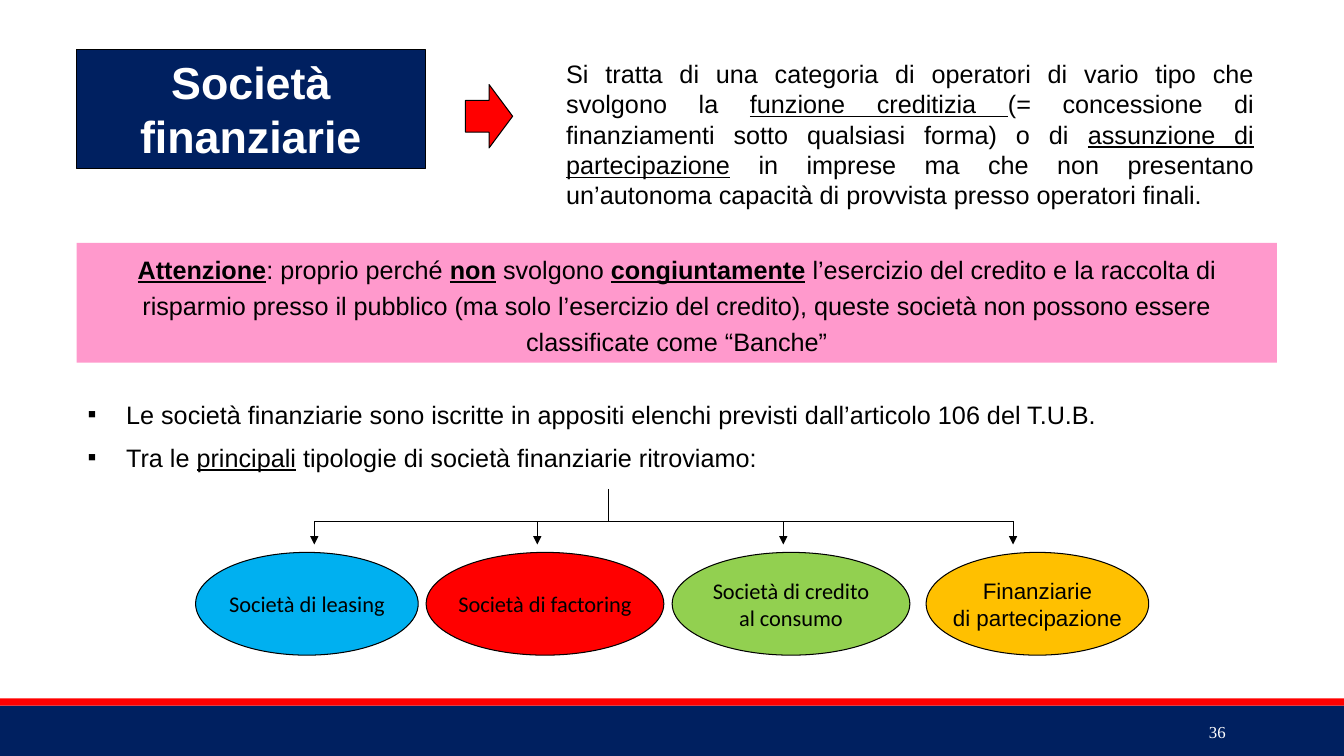
from dataclasses import dataclass

from lxml import etree
from pptx import Presentation
from pptx import util as u
from pptx.dml.color import RGBColor
from pptx.enum import shapes, text
from pptx.oxml.ns import qn


@dataclass(frozen=True)
class Theme:
    navy: str = "002060"
    red: str = "FF0000"
    pink: str = "FF99CC"
    blue: str = "00B0F0"
    green: str = "92D050"
    amber: str = "FFC000"
    black: str = "000000"
    white: str = "FFFFFF"
    title: int = 32
    body: int = 18
    label: int = 16
    number: int = 12
    line: float = 0.75
    main: str = "Arial"
    alternate: str = "Calibri"
    serif: str = "Times New Roman"


class SlideBuilder:
    def __init__(self, page, theme):
        self.page = page
        self.theme = theme

    def shape(self, kind, place, fill, outlined=True):
        """Add a filled preset shape; place is left, top, width, height in cm."""
        shape = self.page.shapes.add_shape(kind, *map(u.Cm, place))
        shape.shadow.inherit = False
        shape.fill.solid()
        shape.fill.fore_color.rgb = RGBColor.from_string(fill)
        if outlined:
            shape.line.color.rgb = RGBColor.from_string(self.theme.black)
            shape.line.width = u.Pt(self.theme.line)
        else:
            shape.line.fill.background()
        return shape

    def textbox(self, place):
        return self.page.shapes.add_textbox(*map(u.Cm, place))

    def add_text(self, box, paragraphs, size, align, color=None, font=None,
                 middle=False, wrap=True, spacing=None, gap=0, bullet=None):
        """Fill a box; each paragraph lists (words, marks), marks of b and u."""
        frame = box.text_frame
        frame.word_wrap = wrap
        frame.vertical_anchor = text.MSO_ANCHOR.MIDDLE if middle else text.MSO_ANCHOR.TOP
        for index, runs in enumerate(paragraphs):
            para = frame.add_paragraph() if index else frame.paragraphs[0]
            para.alignment = align
            if spacing:
                para.line_spacing = spacing
            if index and gap:
                para.space_before = u.Pt(gap)
            if bullet:
                self.bullet(para, bullet)
            for words, marks in runs:
                span = para.add_run()
                span.text = words
                span.font.size = u.Pt(size)
                span.font.name = font or self.theme.main
                span.font.bold = "b" in marks
                span.font.underline = "u" in marks
                span.font.color.rgb = RGBColor.from_string(color or self.theme.black)

    def bullet(self, para, symbol, indent=0.97):
        props = para._p.get_or_add_pPr()
        props.set("marL", str(u.Cm(indent)))
        props.set("indent", str(-u.Cm(indent)))
        etree.SubElement(props, qn("a:buFont")).set("typeface", self.theme.main)
        etree.SubElement(props, qn("a:buChar")).set("char", symbol)

    def line(self, start, end, arrow=False):
        line = self.page.shapes.add_connector(
            shapes.MSO_CONNECTOR.STRAIGHT, *map(u.Cm, (*start, *end)))
        line.line.color.rgb = RGBColor.from_string(self.theme.black)
        line.line.width = u.Pt(self.theme.line)
        if arrow:
            outline = line._element.spPr.find(qn("a:ln"))
            etree.SubElement(outline, qn("a:tailEnd")).set("type", "triangle")
        etree.SubElement(line._element.spPr, qn("a:effectLst"))


def main():
    theme = Theme()
    deck = Presentation()
    deck.slide_width, deck.slide_height = u.Cm(33.87), u.Cm(19.05)
    slide = SlideBuilder(deck.slides.add_slide(deck.slide_layouts[6]), theme)
    kinds, align = shapes.MSO_SHAPE, text.PP_ALIGN

    # Footer band and page number
    slide.shape(kinds.RECTANGLE, (0, 17.78, 33.87, 1.27), theme.navy, outlined=False)
    slide.shape(kinds.RECTANGLE, (0, 17.6, 33.87, 0.18), theme.red, outlined=False)
    number = slide.textbox((27.51, 17.93, 3.63, 1.02))
    slide.add_text(number, [[("36", "")]], theme.number, align.RIGHT,
                   theme.white, theme.serif, middle=True)

    # Title, arrow and definition
    title = slide.shape(kinds.RECTANGLE, (1.93, 1.26, 8.79, 3), theme.navy)
    slide.add_text(title, [[("Società finanziarie", "b")]], theme.title,
                   align.CENTER, theme.white)
    slide.shape(kinds.RIGHT_ARROW, (11.73, 2.13, 1.19, 1.6), theme.red)
    definition = slide.textbox((14.02, 1.35, 17.83, 4.11))
    slide.add_text(definition, [[
        ("Si tratta di una categoria di operatori di vario tipo che svolgono la ", ""),
        ("funzione creditizia ", "u"),
        ("(= concessione di finanziamenti sotto qualsiasi forma) o di ", ""),
        ("assunzione di partecipazione", "u"),
        (" in imprese ma che non presentano un’autonoma capacità di provvista "
         "presso operatori finali.", ""),
    ]], theme.body, align.JUSTIFY)

    # Warning band
    warning = slide.shape(kinds.RECTANGLE, (1.93, 6.12, 30.25, 3.02), theme.pink,
                          outlined=False)
    slide.add_text(warning, [[
        ("Attenzione", "bu"),
        (": proprio perché ", ""),
        ("non", "bu"),
        (" svolgono ", ""),
        ("congiuntamente", "bu"),
        (" l’esercizio del credito e la raccolta di risparmio presso il pubblico "
         "(ma solo l’esercizio del credito), queste società non possono essere "
         "classificate come “Banche”", ""),
    ]], theme.body, align.CENTER, spacing=1.2)

    # Bulleted remarks
    remarks = slide.textbox((1.96, 9.93, 30.2, 2.18))
    slide.add_text(remarks, [
        [("Le società finanziarie sono iscritte in appositi elenchi previsti "
          "dall’articolo 106 del T.U.B.", "")],
        [("Tra le ", ""), ("principali", "u"),
         (" tipologie di società finanziarie ritroviamo:", "")],
    ], theme.body, align.JUSTIFY, gap=9, bullet="▪")

    # Company types: left, width, arrow position, fill, font, lines
    types = [
        (4.93, 5.61, 7.92, theme.blue, theme.alternate, ["Società di leasing"]),
        (10.74, 5.99, 13.54, theme.red, theme.alternate, ["Società di factoring"]),
        (16.94, 5.99, 19.74, theme.green, theme.alternate,
         ["Società di credito", "al consumo"]),
        (23.34, 5.61, 25.53, theme.amber, theme.main,
         ["Finanziarie", "di partecipazione"]),
    ]
    stem_x, stem_y, bar_y, tip_y = 15.34, 12.32, 13.13, 13.72
    slide.line((stem_x, stem_y), (stem_x, bar_y))
    slide.line((types[0][2], bar_y), (types[-1][2], bar_y))
    for left, width, arrow_x, fill, font, lines in types:
        oval = slide.shape(kinds.OVAL, (left, 13.92, width, 2.59), fill)
        slide.add_text(oval, [[(words, "")] for words in lines], theme.label,
                       align.CENTER, font=font, middle=True, wrap=False)
        slide.line((arrow_x, bar_y), (arrow_x, tip_y), arrow=True)

    deck.save("out.pptx")


if __name__ == "__main__":
    main()
